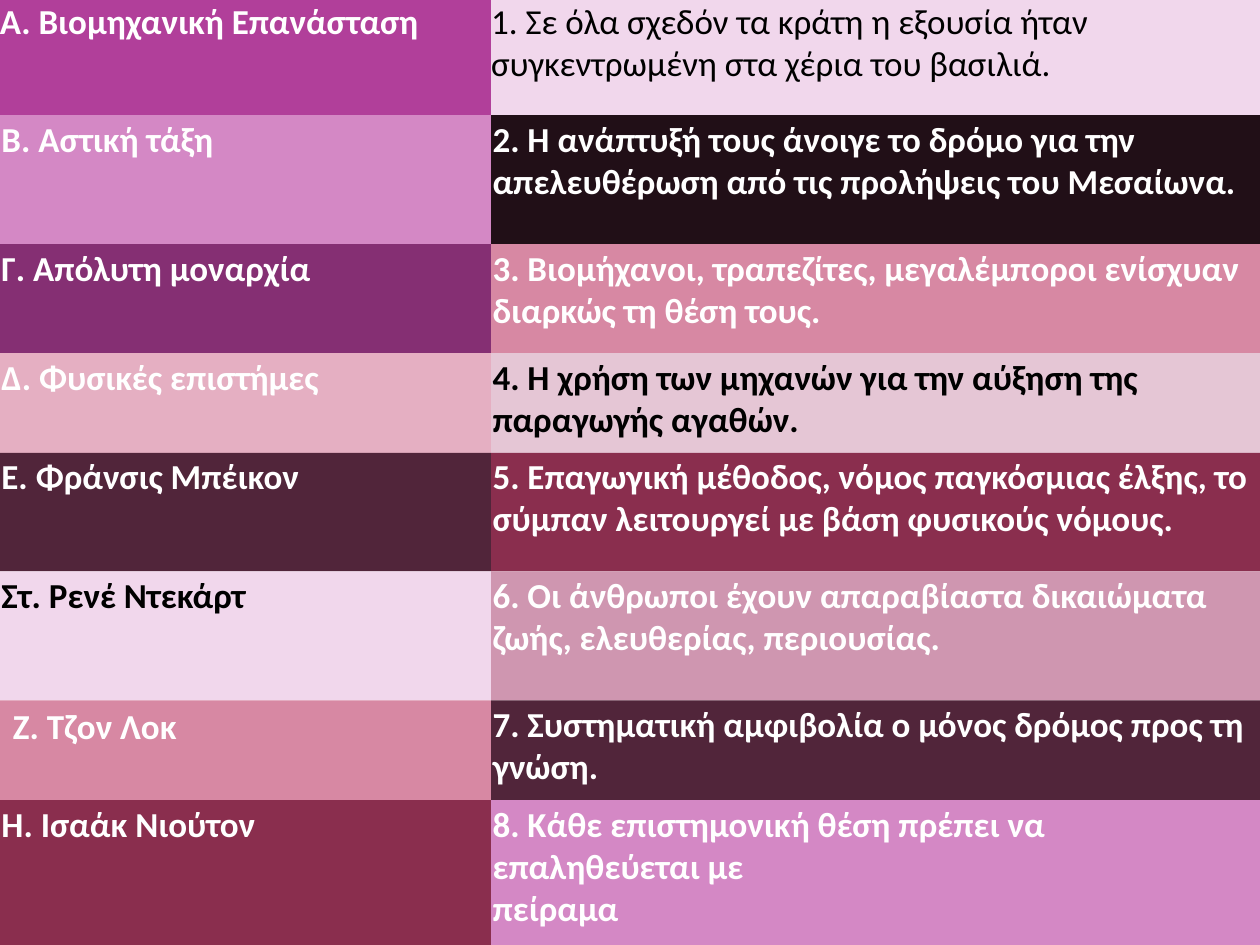
from dataclasses import dataclass

import pptx
import pptx.dml.color
import pptx.enum.shapes
import pptx.enum.text
import pptx.util
from pptx.util import Cm


@dataclass(frozen=True)
class Theme:
    font: str = "Calibri"
    size: int = 20
    white: str = "FFFFFF"
    black: str = "000000"
    magenta: str = "B13F9A"
    orchid: str = "D488C5"
    purple: str = "852F73"
    blush: str = "E5AFC2"
    plum: str = "51253A"
    lilac: str = "F1D7EC"
    rose: str = "D788A3"
    wine: str = "8A2E4E"
    night: str = "210F17"
    mist: str = "E5C6D5"
    mauve: str = "CF96B0"


THEME = Theme()
WIDTH, SPLIT = 25.4, 9.9
ROW_EDGES = [0, 2.32, 4.92, 7.12, 9.13, 11.52, 14.12, 16.13, 19.05]


@dataclass(frozen=True)
class Panel:
    lines: tuple
    fill: str
    ink: str = THEME.white
    bold: bool = True
    indent: float = 0.03
    drop: float = 0.04


TERMS = [
    Panel(("Α. Βιομηχανική Επανάσταση",), THEME.magenta, indent=0, drop=0),
    Panel(("Β. Αστική τάξη",), THEME.orchid),
    Panel(("Γ. Απόλυτη μοναρχία",), THEME.purple),
    Panel(("Δ. Φυσικές επιστήμες",), THEME.blush),
    Panel(("Ε. Φράνσις Μπέικον",), THEME.plum),
    Panel(("Στ. Ρενέ Ντεκάρτ",), THEME.lilac, THEME.black),
    Panel(("Ζ. Τζον Λοκ",), THEME.rose, indent=0.26, drop=0.08),
    Panel(("Η. Ισαάκ Νιούτον",), THEME.wine),
]

STATEMENTS = [
    Panel(("1. Σε όλα σχεδόν τα κράτη η εξουσία ήταν συγκεντρωμένη στα χέρια του βασιλιά.",),
          THEME.lilac, THEME.black, bold=False, indent=0, drop=0),
    Panel(("2. Η ανάπτυξή τους άνοιγε το δρόμο για την",
           "απελευθέρωση από τις προλήψεις του Μεσαίωνα."), THEME.night),
    Panel(("3. Βιομήχανοι, τραπεζίτες, μεγαλέμποροι ενίσχυαν διαρκώς τη θέση τους.",),
          THEME.rose),
    Panel(("4. Η χρήση των μηχανών για την αύξηση της", "παραγωγής αγαθών."),
          THEME.mist, THEME.black),
    Panel(("5. Επαγωγική μέθοδος, νόμος παγκόσμιας έλξης, το σύμπαν λειτουργεί "
           "με βάση φυσικούς νόμους.",), THEME.wine),
    Panel(("6. Οι άνθρωποι έχουν απαραβίαστα δικαιώματα ζωής, ελευθερίας, περιουσίας.",),
          THEME.mauve),
    Panel(("7. Συστηματική αμφιβολία ο μόνος δρόμος προς τη γνώση.",), THEME.plum),
    Panel(("8. Κάθε επιστημονική θέση πρέπει να επαληθεύεται με", "πείραμα"),
          THEME.orchid),
]


def color(code):
    return pptx.dml.color.RGBColor.from_string(code)


def write_lines(frame, panel):
    frame.word_wrap = True
    frame.vertical_anchor = pptx.enum.text.MSO_ANCHOR.TOP
    frame.margin_left, frame.margin_top = Cm(panel.indent), Cm(panel.drop)
    frame.margin_right = frame.margin_bottom = 0
    for number, line in enumerate(panel.lines):
        para = frame.add_paragraph() if number else frame.paragraphs[0]
        para.text = line
        para.alignment = pptx.enum.text.PP_ALIGN.LEFT
        para.font.name = THEME.font
        para.font.size = pptx.util.Pt(THEME.size)
        para.font.bold = panel.bold
        para.font.color.rgb = color(panel.ink)


def add_panel(page, panel, left, top, right, bottom):
    box = page.shapes.add_shape(
        pptx.enum.shapes.MSO_SHAPE.RECTANGLE,
        Cm(left), Cm(top), Cm(right - left), Cm(bottom - top))
    box.shadow.inherit = False
    box.fill.solid()
    box.fill.fore_color.rgb = color(panel.fill)
    box.line.fill.background()
    write_lines(box.text_frame, panel)


def add_column(page, panels, left, right):
    for panel, top, bottom in zip(panels, ROW_EDGES, ROW_EDGES[1:]):
        add_panel(page, panel, left, top, right, bottom)


def main():
    deck = pptx.Presentation()
    deck.slide_width, deck.slide_height = Cm(WIDTH), Cm(ROW_EDGES[-1])
    page = deck.slides.add_slide(deck.slide_layouts[6])
    add_column(page, TERMS, 0, SPLIT)
    add_column(page, STATEMENTS, SPLIT, WIDTH)
    deck.save("out.pptx")


if __name__ == "__main__":
    main()
